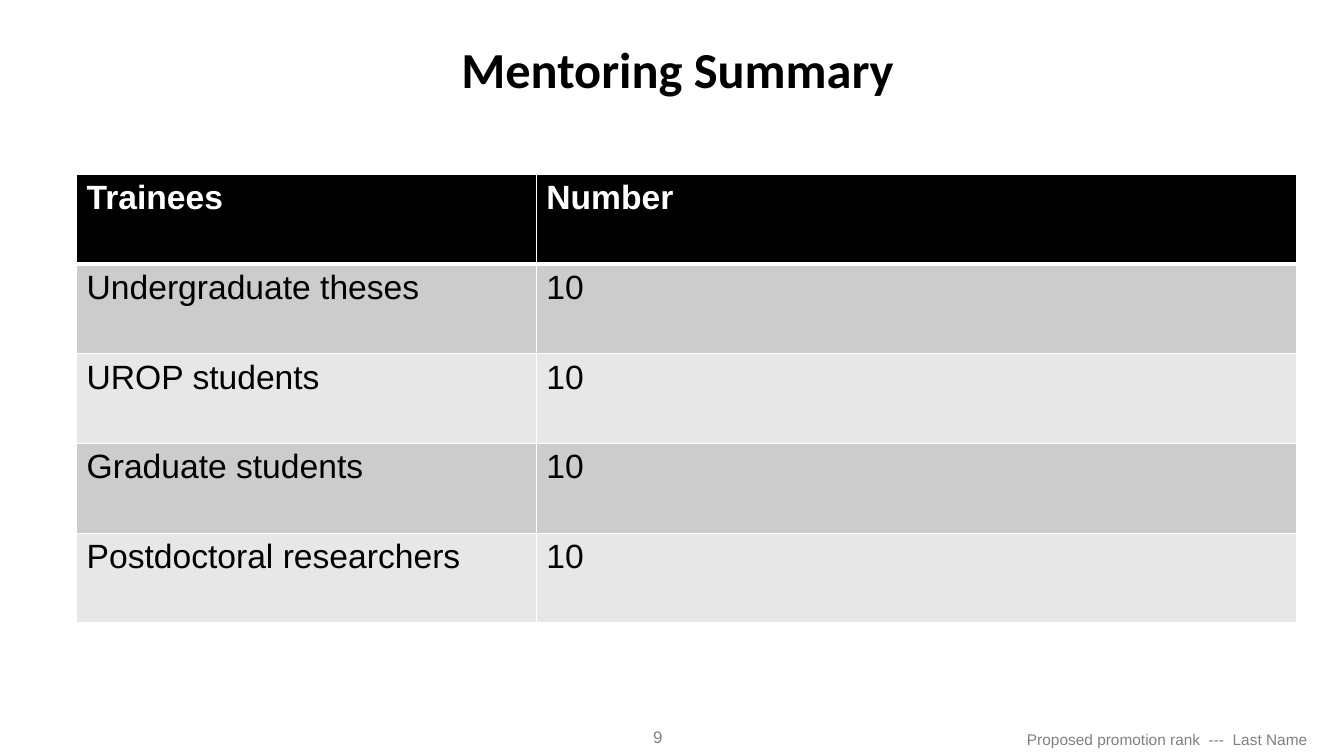
from dataclasses import dataclass

from lxml.etree import SubElement
from pptx import Presentation
from pptx.dml.color import RGBColor
from pptx.enum.text import PP_ALIGN as Align
from pptx.oxml.ns import qn
from pptx.util import Emu, Pt

EMU_PER_PX = 9144
BLACK, WHITE, GRAY = "000000", "FFFFFF", "808080"
BANDS = ("CCCCCC", "E7E7E7")
BORDERS = ("lnL", "lnR", "lnT", "lnB")


@dataclass(frozen=True)
class Label:
    text: str
    left: int
    top: int
    width: int
    height: int
    size: int
    font: str = "Arial"
    color: str = GRAY
    bold: bool = False
    align: Align = Align.LEFT
    inset_top: int = 5


LABELS = (
    Label("9", 638, 716, 61, 30, 12),
    Label("Proposed promotion rank  ---  Last Name", 885, 719, 422, 24, 11,
          align=Align.RIGHT),
    Label("Mentoring Summary", 75, 30, 1194, 53, 36, "Calibri", BLACK, True,
          Align.CENTER, 8),
)
TRAINEES = (
    ("Trainees", "Number"),
    ("Undergraduate theses", "10"),
    ("UROP students", "10"),
    ("Graduate students", "10"),
    ("Postdoctoral researchers", "10"),
)
TABLE_LEFT, TABLE_TOP = 76, 173
COLUMN_WIDTHS = (456, 754)
ROW_HEIGHT = 89


def px(length: int) -> Emu:
    return Emu(length * EMU_PER_PX)


def rgb(color: str) -> RGBColor:
    return RGBColor.from_string(color)


def style_font(para, size: int, font: str, color: str, bold: bool) -> None:
    para.font.size = Pt(size)
    para.font.name = font
    para.font.bold = bold
    para.font.color.rgb = rgb(color)


def draw_label(page, label: Label) -> None:
    box = page.shapes.add_textbox(
        px(label.left), px(label.top), px(label.width), px(label.height))
    frame = box.text_frame
    frame.word_wrap = True
    frame.margin_top = px(label.inset_top)
    para = frame.paragraphs[0]
    para.text = label.text
    para.alignment = label.align
    style_font(para, label.size, label.font, label.color, label.bold)


def set_borders(cell, header: bool) -> None:
    properties = cell._tc.get_or_add_tcPr()
    for side in BORDERS:
        points = 3 if header and side == "lnB" else 1
        line = SubElement(properties, qn(f"a:{side}"), w=str(Pt(points)))
        fill = SubElement(line, qn("a:solidFill"))
        SubElement(fill, qn("a:srgbClr"), val=WHITE)


def draw_table(page) -> None:
    table = page.shapes.add_table(
        len(TRAINEES), len(COLUMN_WIDTHS), px(TABLE_LEFT), px(TABLE_TOP),
        px(sum(COLUMN_WIDTHS)), px(ROW_HEIGHT * len(TRAINEES))).table
    for column, width in zip(table.columns, COLUMN_WIDTHS):
        column.width = px(width)
    for row, texts in enumerate(TRAINEES):
        header = row == 0
        for column, text in enumerate(texts):
            cell = table.cell(row, column)
            set_borders(cell, header)
            cell.fill.solid()
            cell.fill.fore_color.rgb = rgb(BLACK if header else BANDS[(row - 1) % 2])
            para = cell.text_frame.paragraphs[0]
            para.text = text
            style_font(para, 24, "Arial", WHITE if header else BLACK, header)


def main() -> None:
    deck = Presentation()
    deck.slide_width, deck.slide_height = px(1333), px(750)
    page = deck.slides.add_slide(deck.slide_layouts[6])
    for label in LABELS:
        draw_label(page, label)
    draw_table(page)
    deck.save("out.pptx")


if __name__ == "__main__":
    main()
